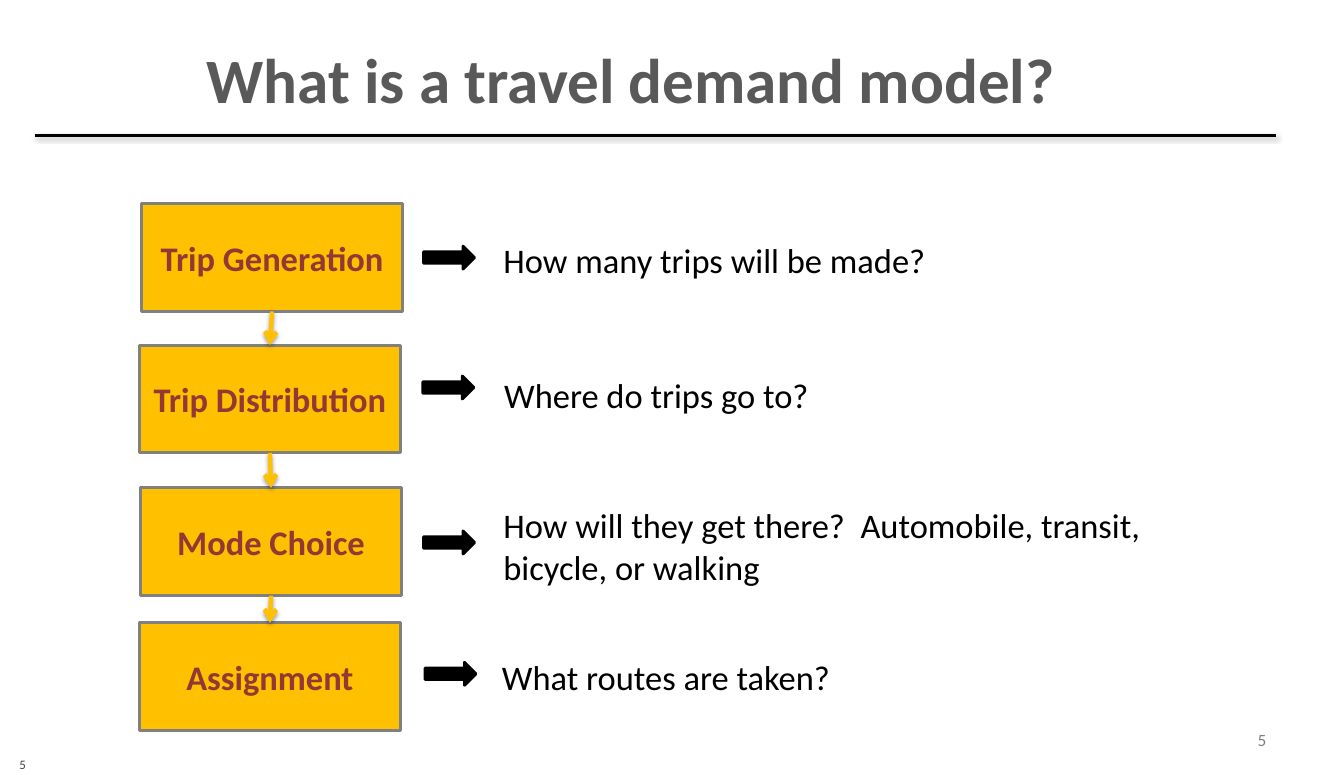
from collections import namedtuple
from itertools import pairwise

from lxml.etree import SubElement
from pptx import Presentation
from pptx.dml.color import RGBColor
from pptx.enum.shapes import MSO_CONNECTOR as Connector, MSO_SHAPE as Shape
from pptx.enum.text import MSO_ANCHOR as Anchor, PP_ALIGN as Align
from pptx.oxml.ns import qn
from pptx.util import Pt

Box = namedtuple("Box", "left top width height")
Step = namedtuple("Step", "name question card arrow text")

FONT = "Calibri"
BLACK, GOLD, GRAY, BRICK = "000000", "FFC000", "808080", "953735"
STEPS = [
    Step("Trip Generation", "How many trips will be made?",
         (1.5, 0), (198, 29.5), (246.5, 21)),
    Step("Trip Distribution", "Where do trips go to?",
         (0, 98.5), (197.5, 120), (247, 115)),
    Step("Mode Choice", "How will they get there?  Automobile, transit, bicycle, or walking",
         (0.75, 198), (198, 228), (246.5, 220)),
    Step("Assignment", "What routes are taken?",
         (0, 292), (199, 319.5), (245.5, 311.5)),
]


def color(value):
    """Turn a hex string into a colour."""
    return RGBColor.from_string(value)


def points(box):
    """Give the four lengths of a box in points."""
    return [Pt(length) for length in box]


def write(shape, text, size, ink, align=Align.LEFT, anchor=Anchor.MIDDLE, bold=False):
    """Fill a shape with one styled paragraph."""
    frame = shape.text_frame
    frame.word_wrap = True
    frame.vertical_anchor = anchor
    para = frame.paragraphs[0]
    para.text = text
    para.alignment = align
    font = para.font
    font.name, font.size, font.bold = FONT, Pt(size), bold
    font.color.rgb = color(ink)


def add_text(page, box, *style, **options):
    """Add a text box with one styled paragraph."""
    write(page.shapes.add_textbox(*points(box)), *style, **options)


def add_block(page, kind, box, fill, outline):
    """Add a flat preset shape."""
    block = page.shapes.add_shape(kind, *points(box))
    block.shadow.inherit = False
    block.fill.solid()
    block.fill.fore_color.rgb = color(fill)
    block.line.color.rgb = color(outline)
    block.line.width = Pt(2)
    return block


def add_line(page, start, end, ink, width, arrow=False):
    """Add a straight line with a soft shadow below it."""
    line = page.shapes.add_connector(Connector.STRAIGHT, *points(start + end))
    line.line.color.rgb = color(ink)
    line.line.width = Pt(width)
    if arrow:
        SubElement(line.line._get_or_add_ln(), qn("a:tailEnd"), type="arrow")
    effects = SubElement(line._element.spPr, qn("a:effectLst"))
    shadow = SubElement(effects, qn("a:outerShdw"), blurRad="40000", dist="20000",
                        dir="5400000", rotWithShape="0")
    tint = SubElement(shadow, qn("a:srgbClr"), val=BLACK)
    SubElement(tint, qn("a:alpha"), val="38000")
    return line


def add_header(page, box):
    """Place the title and the rule under it."""
    title = Box(box.left + 105, box.top, 620.5, 83.5)
    add_text(page, title, "What is a travel demand model?", 44, "595959",
             align=Align.CENTER, anchor=Anchor.TOP, bold=True)
    rule = box.top + box.height
    add_line(page, (box.left, rule), (box.left + box.width, rule), BLACK, 2)


def add_step(page, box, step):
    """Place one step card with its arrow and question, and return the card."""
    def place(offset, width, height):
        return Box(box.left + offset[0], box.top + offset[1], width, height)

    card = add_block(page, Shape.RECTANGLE, place(step.card, 182, 75), GOLD, GRAY)
    write(card, step.name, 24, BRICK, align=Align.CENTER, bold=True)
    add_block(page, Shape.RIGHT_ARROW, place(step.arrow, 35.5, 16), BLACK, BLACK)
    add_text(page, place(step.text, 525, 36.5), step.question, 24, BLACK)
    return card


def add_flow(page, box):
    """Place the steps and join each card to the next."""
    cards = [add_step(page, box, step) for step in STEPS]
    for upper, lower in pairwise(cards):
        link = add_line(page, (0, 0), (0, 0), GOLD, 3, arrow=True)
        link.begin_connect(upper, 2)
        link.end_connect(lower, 0)


def add_footer(page, box):
    """Place the page number at both ends of the footer."""
    add_text(page, Box(box.left, box.top + 23, 162, 11), "5", 9, "404040", anchor=Anchor.TOP)
    right = Box(box.left + box.width - 218, box.top, 218, 29)
    add_text(page, right, "5", 12, GRAY, align=Align.RIGHT)


def main():
    """Build and save the deck."""
    deck = Presentation()
    deck.slide_width, deck.slide_height = Pt(936), Pt(540)
    page = deck.slides.add_slide(deck.slide_layouts[6])
    add_header(page, Box(24.5, 24.5, 864.5, 70))
    add_flow(page, Box(97, 142, 771, 367))
    add_footer(page, Box(6.5, 500.5, 882.5, 34))
    deck.save("out.pptx")


if __name__ == "__main__":
    main()
